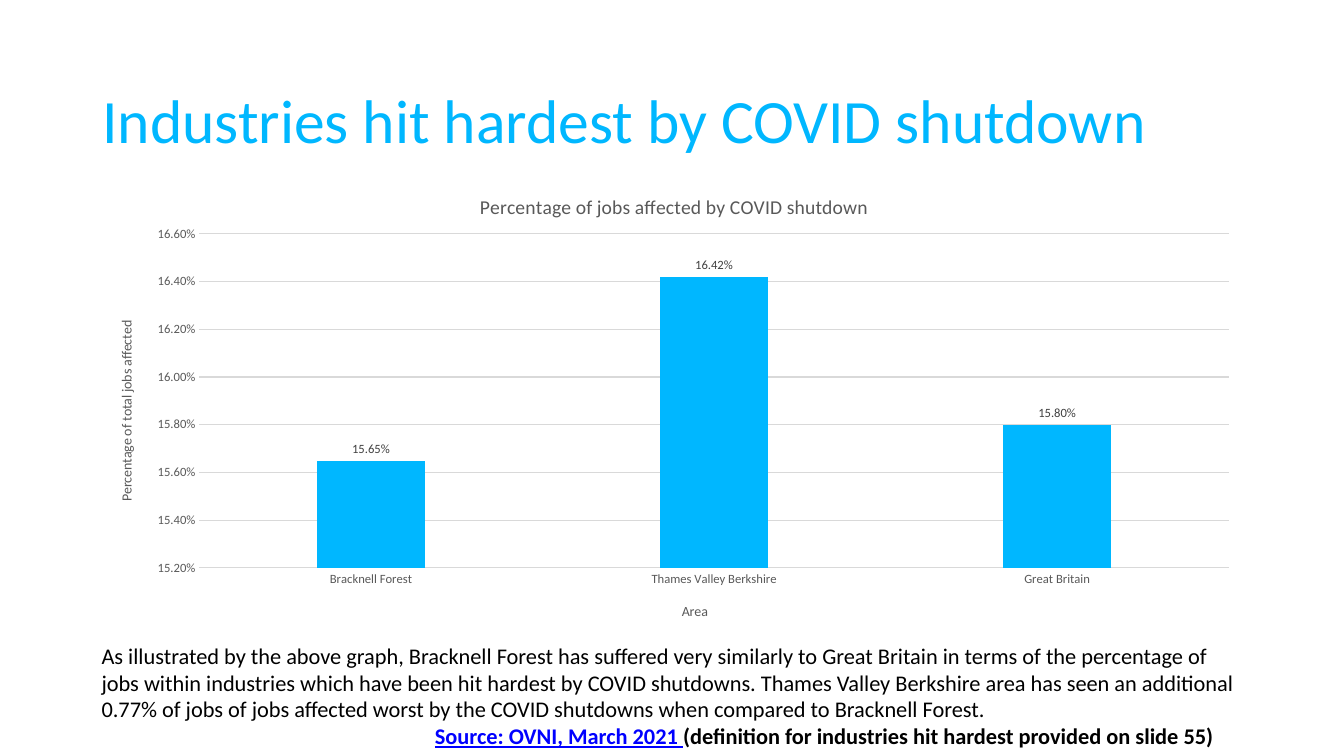
import pptx
import pptx.chart.data
import pptx.dml.color
import pptx.enum.chart
import pptx.enum.text
import pptx.oxml
import pptx.oxml.ns
import pptx.util
from pptx.util import Cm

FONT = "Calibri"
SKY, BLACK, GREY, PALE = "00B7FF", "000000", "595959", "D9D9D9"
LEFT, WIDTH = 2.31, 29.21


def rgb(color):
    return pptx.dml.color.RGBColor.from_string(color)


def style_font(font, size, color, bold=False):
    font.name = FONT
    font.size = pptx.util.Pt(size)
    font.bold = bold
    font.color.rgb = rgb(color)


def add_text_area(slide, left, top, width, height, anchor):
    frame = slide.shapes.add_textbox(Cm(left), Cm(top), Cm(width), Cm(height)).text_frame
    frame.word_wrap = True
    frame.vertical_anchor = anchor
    return frame


def set_layout(element, target=None, **fractions):
    """Place a chart part by fractions of the chart's width and height."""
    qn = pptx.oxml.ns.qn
    for previous in element.findall(qn("c:layout")):
        element.remove(previous)
    modes = {"xMode": "edge", "yMode": "edge"}
    values = ({"layoutTarget": target} if target else {}) | modes | fractions
    settings = "".join(f'<c:{name} val="{value}"/>' for name, value in values.items())
    layout = pptx.oxml.parse_xml(
        f'<c:layout {pptx.oxml.ns.nsdecls("c")}>'
        f"<c:manualLayout>{settings}</c:manualLayout></c:layout>")
    element.insert(0 if element.find(qn("c:tx")) is None else 1, layout)


def add_chart_title(owner, text, size, x, y):
    """Title a chart or one of its axes."""
    title = owner.chart_title if hasattr(owner, "chart_title") else owner.axis_title
    heading = title.text_frame.paragraphs[0]
    heading.text = text
    style_font(heading.font, size, GREY)
    set_layout(title._element, x=x, y=y)


def style_axis(axis):
    axis.major_tick_mark = axis.minor_tick_mark = pptx.enum.chart.XL_TICK_MARK.NONE
    style_font(axis.tick_labels.font, 9, GREY)


def style_line(line):
    line.color.rgb = rgb(PALE)
    line.width = pptx.util.Pt(0.75)


def add_jobs_chart(slide):
    jobs = pptx.chart.data.CategoryChartData(number_format="0.00%")
    jobs.categories = ["Bracknell Forest", "Thames Valley Berkshire", "Great Britain"]
    jobs.add_series("Series 1", [0.1565, 0.1642, 0.158])
    chart = slide.shapes.add_chart(
        pptx.enum.chart.XL_CHART_TYPE.COLUMN_CLUSTERED,
        Cm(LEFT), Cm(4.24), Cm(WIDTH), Cm(11.81), jobs).chart
    style_font(chart.font, 10, BLACK)
    chart.has_legend = False
    set_layout(chart._chartSpace.chart.plotArea, "inner", x=0.093, y=0.14, w=0.888, h=0.713)

    # Titles
    add_chart_title(chart, "Percentage of jobs affected by COVID shutdown", 14, 0.332, 0.045)
    add_chart_title(chart.category_axis, "Area", 10, 0.507, 0.92)
    add_chart_title(chart.value_axis, "Percentage of total jobs affected", 10, 0.02, 0.32)

    # Axes
    areas, shares = chart.category_axis, chart.value_axis
    style_axis(areas)
    style_line(areas.format.line)
    style_axis(shares)
    style_line(shares.major_gridlines.format.line)
    shares.format.line.fill.background()
    shares.minimum_scale, shares.maximum_scale, shares.major_unit = 0.152, 0.166, 0.002
    shares.tick_labels.number_format = "0.00%"
    shares.tick_labels.number_format_is_linked = False

    # Columns and their labels
    columns = chart.plots[0]
    columns.gap_width, columns.overlap = 219, -27
    columns.vary_by_categories = False
    share_series = columns.series[0]
    share_series.format.fill.solid()
    share_series.format.fill.fore_color.rgb = rgb(SKY)
    labels = share_series.data_labels
    labels.show_value = True
    labels.position = pptx.enum.chart.XL_LABEL_POSITION.OUTSIDE_END
    labels.number_format = "0.00%"
    labels.number_format_is_linked = False
    style_font(labels.font, 9, "404040")


def add_title(slide):
    frame = add_text_area(slide, 2.33, 1.55, WIDTH, 3.15, pptx.enum.text.MSO_ANCHOR.MIDDLE)
    title = frame.paragraphs[0]
    title.text = "Industries hit hardest by COVID shutdown"
    title.line_spacing = 0.9
    style_font(title.font, 44, SKY)


def add_commentary(slide):
    frame = add_text_area(slide, LEFT, 16.05, WIDTH, 3, pptx.enum.text.MSO_ANCHOR.TOP)
    comment = frame.paragraphs[0]
    comment.text = (
        "As illustrated by the above graph, Bracknell Forest has suffered very similarly to "
        "Great Britain in terms of the percentage of jobs within industries which have been "
        "hit hardest by COVID shutdowns. Thames Valley Berkshire area has seen an additional "
        "0.77% of jobs of jobs affected worst by the COVID shutdowns when compared to "
        "Bracknell Forest.")
    style_font(comment.font, 16, BLACK)

    # Source line, indented
    source = frame.add_paragraph()
    source._p.get_or_add_pPr().set("marL", str(Cm(8.4)))
    citation = source.add_run()
    citation.text = "Source: OVNI, March 2021 "
    style_font(citation.font, 16, "0000FF", bold=True)
    citation.font.underline = True
    definition = source.add_run()
    definition.text = "(definition for industries hit hardest provided on slide 55)"
    style_font(definition.font, 16, BLACK, bold=True)


def main():
    deck = pptx.Presentation()
    deck.slide_width, deck.slide_height = Cm(33.87), Cm(19.05)
    slide = deck.slides.add_slide(deck.slide_layouts[6])
    add_title(slide)
    add_commentary(slide)
    add_jobs_chart(slide)
    deck.save("out.pptx")


if __name__ == "__main__":
    main()
